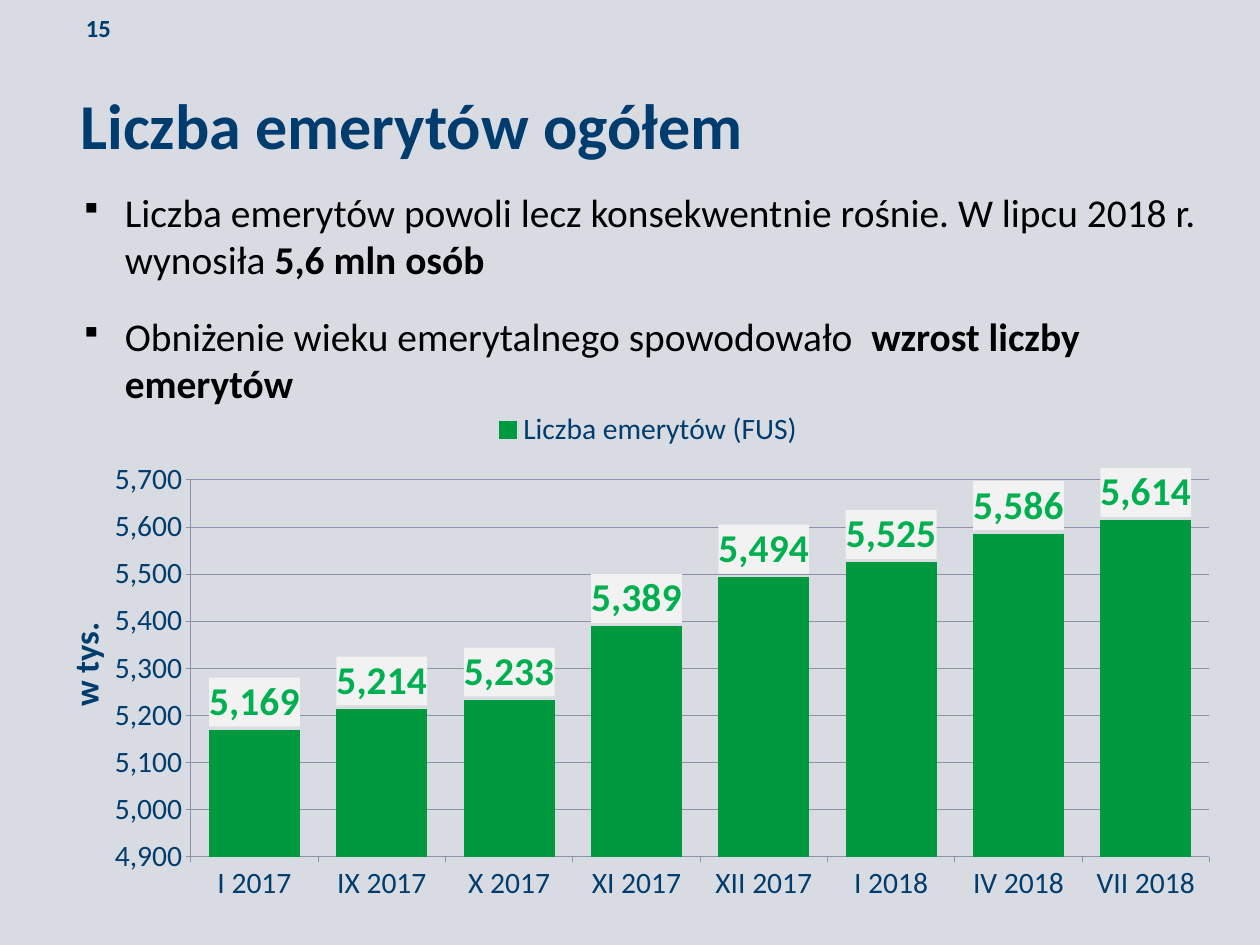
from lxml import etree
from pptx import Presentation
from pptx.chart.data import CategoryChartData
from pptx.dml.color import RGBColor
from pptx.enum.chart import (XL_CHART_TYPE, XL_LABEL_POSITION as LabelPos,
                             XL_LEGEND_POSITION as LegendPos,
                             XL_TICK_MARK as TickMark)
from pptx.enum.text import MSO_ANCHOR as Anchor
from pptx.oxml import parse_xml
from pptx.oxml.ns import nsdecls, qn
from pptx.util import Inches, Pt

NAVY, BLACK, BACKGROUND = "003D6E", "000000", "D8DBE2"
BAR, LABEL, LABEL_FILL, GRID = "00993F", "00B050", "F2F2F2", "8B92A9"

BULLETS = [
    [("Liczba emerytów powoli lecz konsekwentnie rośnie. W lipcu 2018 r. wynosiła ", False),
     ("5,6 mln osób", True)],
    [("Obniżenie wieku emerytalnego spowodowało ", False),
     (" wzrost liczby emerytów", True)],
]
PENSIONERS = {
    "I 2017": 5169, "IX 2017": 5214, "X 2017": 5233, "XI 2017": 5389,
    "XII 2017": 5494, "I 2018": 5525, "IV 2018": 5586, "VII 2018": 5614,
}


def rgb(value):
    return RGBColor.from_string(value)


def set_layout(successor, **values):
    """Place a chart part by fractions; its layout goes before successor."""
    parent = successor.getparent()
    for old in parent.findall(qn("c:layout")):
        parent.remove(old)
    layout = parse_xml(f"<c:layout {nsdecls('c')}><c:manualLayout/></c:layout>")
    for tag, val in values.items():
        etree.SubElement(layout[0], qn(f"c:{tag}")).set("val", str(val))
    successor.addprevious(layout)


class SlideBuilder:
    font = "Calibri"

    def __init__(self, prs):
        self.slide = prs.slides.add_slide(prs.slide_layouts[6])
        fill = self.slide.background.fill
        fill.solid()
        fill.fore_color.rgb = rgb(BACKGROUND)

    def style(self, font, size, color, bold=False):
        font.name, font.size, font.bold = self.font, Pt(size), bold
        font.color.rgb = rgb(color)

    def text_frame(self, box, anchor):
        tf = self.slide.shapes.add_textbox(*map(Inches, box)).text_frame
        tf.word_wrap = True
        tf.vertical_anchor = anchor
        return tf

    def text(self, box, text, size, anchor=Anchor.TOP, inset=None):
        tf = self.text_frame(box, anchor)
        if inset is not None:
            tf.margin_left = tf.margin_right = Inches(inset)
            tf.margin_top = tf.margin_bottom = Inches(inset)
        tf.text = text
        self.style(tf.paragraphs[0].runs[0].font, size, NAVY, True)

    def bullets(self, box, items, size):
        tf = self.text_frame(box, Anchor.MIDDLE)
        for i, item in enumerate(items):
            p = tf.paragraphs[0] if i == 0 else tf.add_paragraph()
            p.space_before, p.space_after = Pt(18), Pt(6)
            pPr = p._p.get_or_add_pPr()
            pPr.set("marL", str(Inches(0.5)))
            pPr.set("indent", str(Inches(-0.5)))
            etree.SubElement(pPr, qn("a:buSzPct")).set("val", "75000")
            etree.SubElement(pPr, qn("a:buChar")).set("char", "▪")
            for text, bold in item:
                r = p.add_run()
                r.text = text
                self.style(r.font, size, BLACK, bold)

    def column_chart(self, box, name, values, axis_title):
        data = CategoryChartData(number_format="#,##0")
        data.categories = list(values)
        data.add_series(name, list(values.values()))
        chart = self.slide.shapes.add_chart(
            XL_CHART_TYPE.COLUMN_CLUSTERED, *map(Inches, box), data).chart
        self.style(chart.font, 18, NAVY)
        chart.has_title = False
        plot = chart.plots[0]
        plot.gap_width, plot.vary_by_categories = 40, False
        set_layout(plot._element, layoutTarget="inner", xMode="edge", yMode="edge",
                   x=0.125, y=0.16, w=0.869, h=0.718)
        series = plot.series[0]
        series.format.fill.solid()
        series.format.fill.fore_color.rgb = rgb(BAR)
        self.data_labels(series.data_labels)
        self.legend(chart)
        self.axes(chart, axis_title)

    def data_labels(self, labels):
        labels.show_value = True
        labels.position = LabelPos.OUTSIDE_END
        labels.number_format, labels.number_format_is_linked = "#,##0", False
        self.style(labels.font, 32, LABEL, True)
        labels._element.find(qn("c:txPr")).addprevious(parse_xml(
            f'<c:spPr {nsdecls("c", "a")}><a:solidFill>'
            f'<a:srgbClr val="{LABEL_FILL}"/></a:solidFill></c:spPr>'))

    def legend(self, chart):
        chart.has_legend = True
        legend = chart.legend
        legend.position = LegendPos.RIGHT
        legend.include_in_layout = False
        self.style(legend.font, 24, NAVY)
        set_layout(legend._element.find(qn("c:overlay")), xMode="edge", yMode="edge",
                   x=0.38, y=0.02, w=0.27, h=0.09)

    def axes(self, chart, axis_title):
        value_axis = chart.value_axis
        for axis in (chart.category_axis, value_axis):
            self.style(axis.tick_labels.font, 24, NAVY)
            axis.major_tick_mark = TickMark.OUTSIDE
            axis.minor_tick_mark = TickMark.NONE
            axis.format.line.color.rgb = rgb(GRID)
        value_axis.minimum_scale, value_axis.maximum_scale = 4900, 5700
        value_axis.major_unit = 100
        value_axis.tick_labels.number_format = "#,##0"
        value_axis.tick_labels.number_format_is_linked = False
        value_axis.major_gridlines.format.line.color.rgb = rgb(GRID)
        title = value_axis.axis_title
        tf = title.text_frame
        tf.text = axis_title
        self.style(tf.paragraphs[0].runs[0].font, 28, NAVY, True)
        body = tf._txBody.find(qn("a:bodyPr"))
        body.set("rot", "-5400000")
        body.set("vert", "horz")
        set_layout(title._element.find(qn("c:overlay")), xMode="edge", yMode="edge",
                   x=0.01, y=0.42)


def main():
    prs = Presentation()
    prs.slide_width, prs.slide_height = Inches(14.22), Inches(10.67)
    s = SlideBuilder(prs)
    s.text((0.91, 0.09, 0.85, 0.45), "15", 20, Anchor.MIDDLE, 0.06)
    s.bullets((0.81, 2.18, 12.99, 2.36), BULLETS, 32)
    s.text((0.81, 0.92, 12.6, 0.94), "Liczba emerytów ogółem", 52)
    s.column_chart((0.5, 4.47, 13.23, 5.93), "Liczba emerytów (FUS)",
                   PENSIONERS, "w tys.")
    prs.save("out.pptx")


if __name__ == "__main__":
    main()
